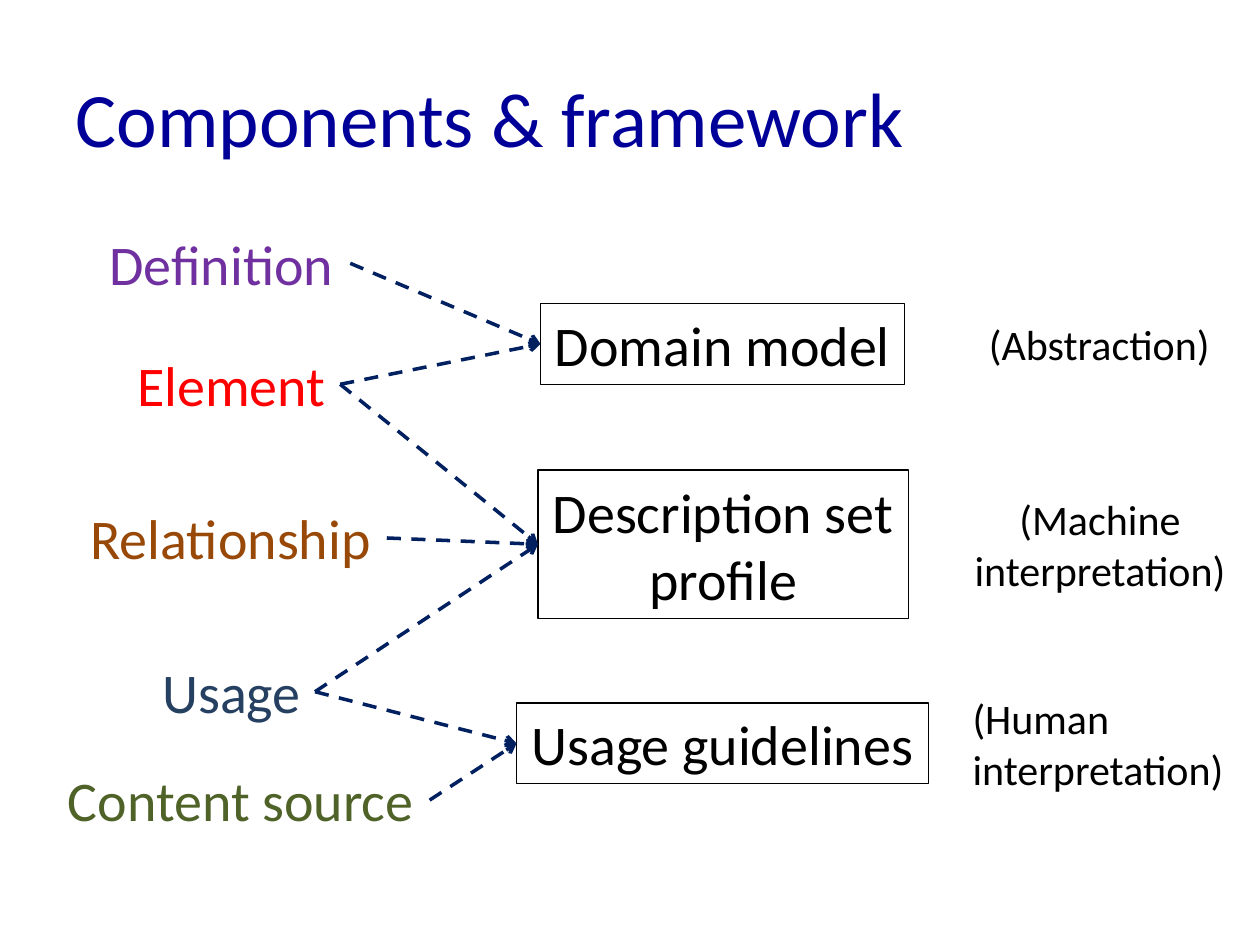
from dataclasses import dataclass

from lxml import etree
from pptx import Presentation
from pptx.dml.color import RGBColor
from pptx.enum import dml, shapes, text
from pptx.oxml import ns
from pptx.util import Inches, Pt


@dataclass(frozen=True)
class Theme:
    """Colours, font and type sizes of the slide."""
    font: str = "Calibri"
    title_size: int = 44
    body_size: int = 32
    note_size: int = 24
    title: str = "000099"
    ink: str = "000000"
    arrow: str = "002060"
    definition: str = "7030A0"
    element: str = "FF0000"
    relationship: str = "984807"
    usage: str = "254061"
    content: str = "4F6228"


THEME = Theme()
LEFT, CENTER = text.PP_ALIGN.LEFT, text.PP_ALIGN.CENTER

COMPONENTS = [
    ("Definition", THEME.definition, (0.77, 1.77, 2.01, 0.64)),
    ("Element", THEME.element, (0.99, 2.73, 1.71, 0.64)),
    ("Relationship", THEME.relationship, (0.62, 3.95, 2.45, 0.64)),
    ("Usage", THEME.usage, (1.19, 5.17, 1.31, 0.64)),
    ("Content source", THEME.content, (0.44, 6.03, 2.97, 0.64)),
]
FRAMEWORK = [
    ("Domain model", (4.29, 2.41, 2.89, 0.64)),
    ("Description set\nprofile", (4.27, 3.73, 2.94, 1.18)),
    ("Usage guidelines", (4.1, 5.58, 3.27, 0.64)),
]
NOTES = [
    ("(Abstraction)", CENTER, (7.74, 2.48, 1.97, 0.5)),
    ("(Machine\ninterpretation)", CENTER, (7.62, 3.87, 2.22, 0.91)),
    ("(Human\ninterpretation)", LEFT, (7.62, 5.45, 2.22, 0.91)),
]
LINKS = [
    ("Definition", "Domain model"),
    ("Element", "Domain model"),
    ("Element", "Description set\nprofile"),
    ("Relationship", "Description set\nprofile"),
    ("Usage", "Description set\nprofile"),
    ("Usage", "Usage guidelines"),
    ("Content source", "Usage guidelines"),
]


def write(sp, words, size, color, align=LEFT, wrap=False):
    """Set the words of a shape and format every run."""
    tf = sp.text_frame
    tf.text = words
    tf.word_wrap = wrap
    for p in tf.paragraphs:
        p.alignment = align
        for r in p.runs:
            r.font.name = THEME.font
            r.font.size = Pt(size)
            r.font.color.rgb = RGBColor.from_string(color)


def add_title(s, words, box):
    """Place and format the title placeholder."""
    sp = s.shapes.title
    sp.left, sp.top, sp.width, sp.height = map(Inches, box)
    write(sp, words, THEME.title_size, THEME.title, wrap=True)
    sp.text_frame.vertical_anchor = text.MSO_ANCHOR.MIDDLE


def add_label(s, words, box, size, color, align=LEFT):
    """Add an unframed text box."""
    sp = s.shapes.add_textbox(*map(Inches, box))
    write(sp, words, size, color, align)
    return sp


def add_frame(s, words, box):
    """Add an outlined rectangle with centred text."""
    sp = s.shapes.add_shape(shapes.MSO_SHAPE.RECTANGLE, *map(Inches, box))
    sp.shadow.inherit = False
    sp.fill.background()
    sp.line.color.rgb = RGBColor.from_string(THEME.ink)
    sp.line.width = Pt(0.75)
    write(sp, words, THEME.body_size, THEME.ink, CENTER)
    return sp


def add_link(s, source, target):
    """Join a component's right side to a frame's left side with a dashed arrow."""
    link = s.shapes.add_connector(shapes.MSO_CONNECTOR.STRAIGHT, 0, 0, 0, 0)
    link.begin_connect(source, 3)
    link.end_connect(target, 1)
    link.line.color.rgb = RGBColor.from_string(THEME.arrow)
    link.line.width = Pt(2)
    link.line.dash_style = dml.MSO_LINE.DASH
    etree.SubElement(link.line._get_or_add_ln(), ns.qn("a:tailEnd"), type="arrow")
    etree.SubElement(link._element.spPr, ns.qn("a:effectLst"))


def add_diagram(s):
    """Place components, framework and notes, then link them."""
    nodes = {}
    for words, color, box in COMPONENTS:
        nodes[words] = add_label(s, words, box, THEME.body_size, color)
    for words, box in FRAMEWORK:
        nodes[words] = add_frame(s, words, box)
    for words, align, box in NOTES:
        add_label(s, words, box, THEME.note_size, THEME.ink, align)
    for source, target in LINKS:
        add_link(s, nodes[source], nodes[target])


def main():
    """Build the slide and save it."""
    prs = Presentation()
    prs.slide_width, prs.slide_height = Inches(10), Inches(7.5)
    s = prs.slides.add_slide(prs.slide_layouts[5])
    add_title(s, "Components & framework", (0.5, 0.3, 9, 1.25))
    add_diagram(s)
    prs.save("out.pptx")


if __name__ == "__main__":
    main()
